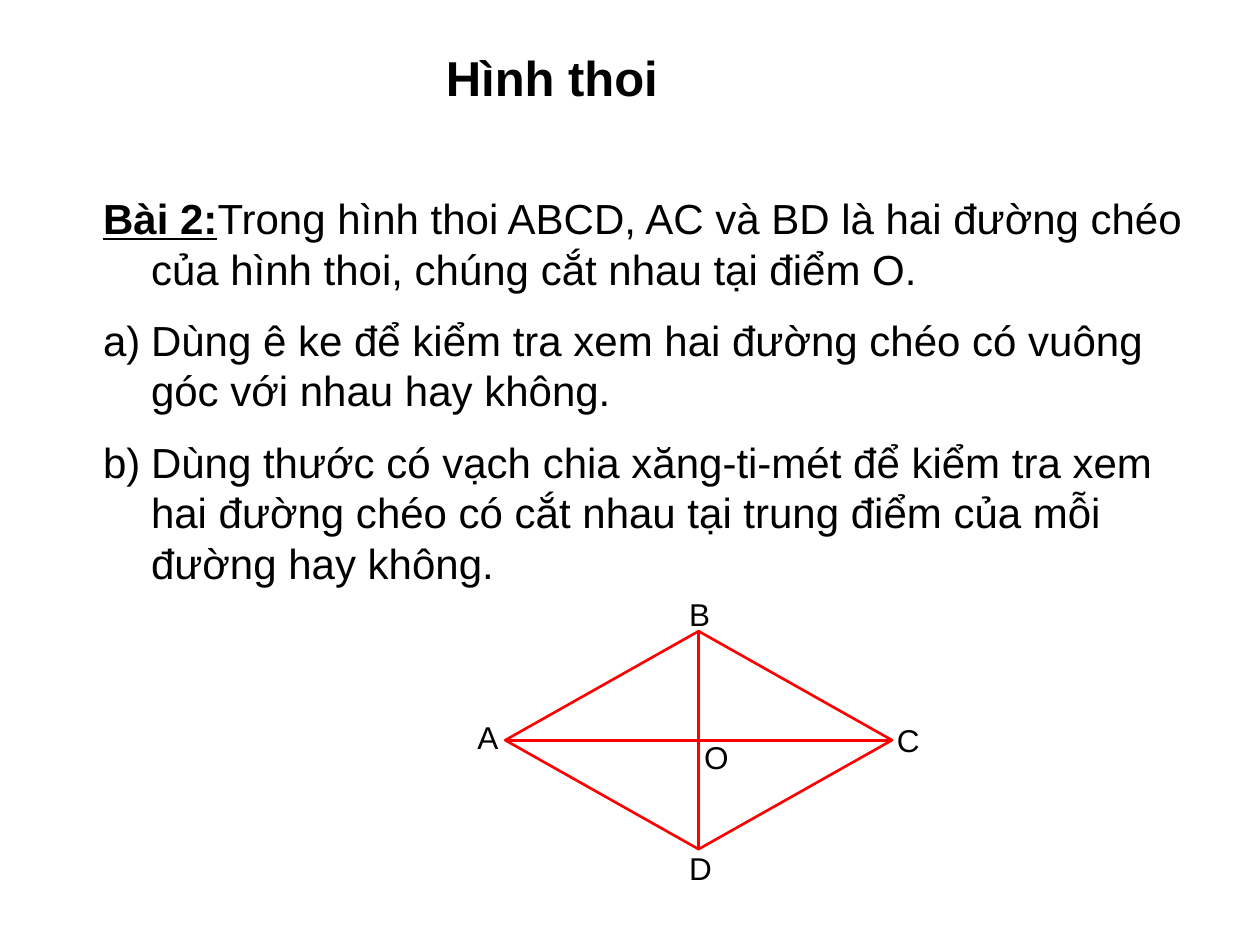
from lxml import etree
from pptx import Presentation
from pptx.dml.color import RGBColor
from pptx.enum.shapes import MSO_CONNECTOR, MSO_SHAPE
from pptx.oxml.ns import qn
from pptx.util import Inches, Pt

DIAMOND = MSO_SHAPE.FLOWCHART_DECISION
STRAIGHT = MSO_CONNECTOR.STRAIGHT
TOP, LEFT, BOTTOM, RIGHT = range(4)
BLACK, RED = "000000", "FF0000"

prs = Presentation()
prs.slide_width, prs.slide_height = Inches(10), Inches(7.5)
s = prs.slides.add_slide(prs.slide_layouts[6])


def rgb(value):
    return RGBColor.from_string(value)


def add_text(box, paragraphs, size):
    """Add a text box; each paragraph is a list of (text, format) runs."""
    tf = s.shapes.add_textbox(*map(Inches, box)).text_frame
    tf.word_wrap = True
    for i, runs in enumerate(paragraphs):
        p = tf.paragraphs[0] if i == 0 else tf.add_paragraph()
        p.space_before = Pt(size / 2 if i else 0)
        for text, extra in runs:
            r = p.add_run()
            r.text = text
            r.font.color.rgb = rgb(BLACK)
            for name, value in {"name": "Arial", "size": Pt(size), **extra}.items():
                setattr(r.font, name, value)
    return tf


add_text((3.44, 0.33, 3.25, 0.57), [[("Hình thoi", {"bold": True})]], 28)

exercise = add_text((0.72, 1.48, 8.82, 3.3), [
    [("Bài 2:", {"bold": True, "underline": True}),
     ("Trong hình thoi ABCD, AC và BD là hai đường chéo của hình thoi, "
      "chúng cắt nhau tại điểm O.", {})],
    [("Dùng ê ke để kiểm tra xem hai đường chéo có vuông góc với nhau hay không.", {})],
    [("Dùng thước có vạch chia xăng-ti-mét để kiểm tra xem hai đường chéo "
      "có cắt nhau tại trung điểm của mỗi đường hay không.", {})],
], 24)

# Hanging indent throughout, with a) and b) numbering on the two questions
for i, p in enumerate(exercise.paragraphs):
    pPr = p._p.get_or_add_pPr()
    pPr.set("marL", str(Inches(0.38)))
    pPr.set("indent", str(-Inches(0.38)))
    if i:
        etree.SubElement(pPr, qn("a:buFont"), typeface="Arial")
        etree.SubElement(pPr, qn("a:buAutoNum"), type="alphaLcParenR")

# Rhombus ABCD and its diagonals AC and BD
rhombus = s.shapes.add_shape(DIAMOND, *map(Inches, (4.01, 5.01, 3.07, 1.73)))
rhombus.shadow.inherit = False
rhombus.fill.background()
diagonals = []
for start, end in ((LEFT, RIGHT), (TOP, BOTTOM)):
    line = s.shapes.add_connector(STRAIGHT, 0, 0, 0, 0)
    line.begin_connect(rhombus, start)
    line.end_connect(rhombus, end)
    etree.SubElement(line._element.spPr, qn("a:effectLst"))
    diagonals.append(line)
for shape in (rhombus, *diagonals):
    shape.line.color.rgb = rgb(RED)
    shape.line.width = Pt(1.5)

for letter, x, y in (("A", 3.69, 5.65), ("B", 5.37, 4.67), ("C", 7.02, 5.67),
                     ("D", 5.37, 6.69), ("O", 5.49, 5.81)):
    add_text((x, y, 0.42, 0.4), [[(letter, {})]], 18)

# The outline must precede the empty effect list in each connector
for line in diagonals:
    spPr = line._element.spPr
    spPr.append(spPr.find(qn("a:effectLst")))

prs.save("out.pptx")
